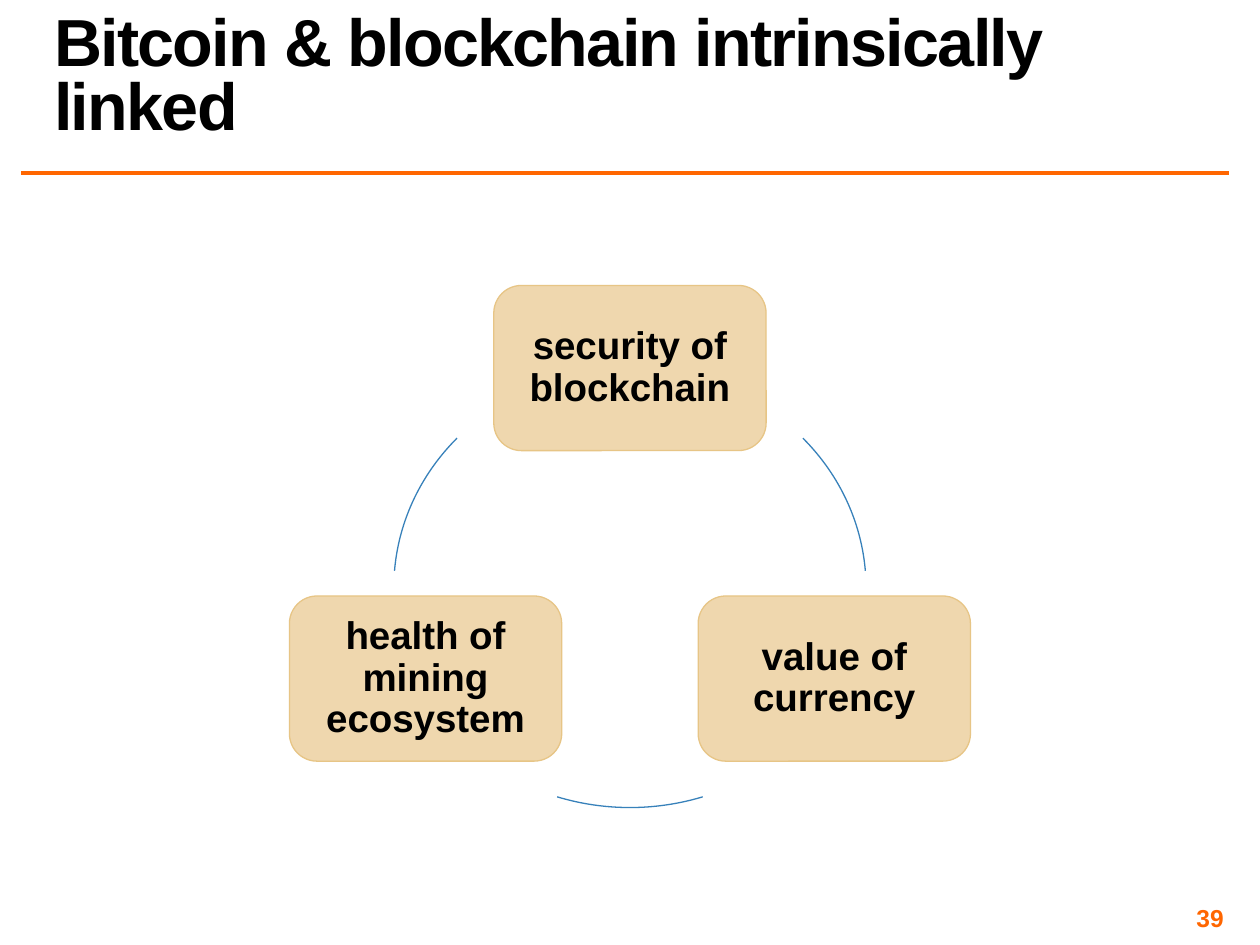
from lxml import etree
from pptx import Presentation
from pptx.dml.color import RGBColor
from pptx.enum.shapes import MSO_CONNECTOR, MSO_SHAPE
from pptx.enum.text import MSO_ANCHOR, PP_ALIGN
from pptx.oxml.ns import qn
from pptx.util import Cm, Pt

ROUNDED, ARC = MSO_SHAPE.ROUNDED_RECTANGLE, MSO_SHAPE.ARC
STRAIGHT = MSO_CONNECTOR.STRAIGHT
MIDDLE, BOTTOM = MSO_ANCHOR.MIDDLE, MSO_ANCHOR.BOTTOM
LEFT, CENTER, RIGHT = PP_ALIGN.LEFT, PP_ALIGN.CENTER, PP_ALIGN.RIGHT

BLACK = RGBColor(0x00, 0x00, 0x00)
ORANGE = RGBColor(0xFF, 0x66, 0x00)
SAND = RGBColor(0xEF, 0xD7, 0xAE)
SAND_EDGE = RGBColor(0xE7, 0xC5, 0x86)
BLUE = RGBColor(0x37, 0x81, 0xBA)


def write_text(shape, text, size, color=BLACK, align=LEFT, anchor=MIDDLE,
               inset_x=0.25, inset_y=0.13, spacing=1.0, before=0, after=0):
    """Fill a shape with one bold Arial paragraph; insets are in centimetres."""
    frame = shape.text_frame
    frame.word_wrap = True
    frame.vertical_anchor = anchor
    frame.margin_left = frame.margin_right = Cm(inset_x)
    frame.margin_top = frame.margin_bottom = Cm(inset_y)
    para = frame.paragraphs[0]
    para.alignment = align
    para.line_spacing = spacing
    para.space_before, para.space_after = Pt(before), Pt(after)
    span = para.add_run()
    span.text = text
    span.font.name, span.font.size, span.font.bold = "Arial", Pt(size), True
    span.font.color.rgb = color
    return span


deck = Presentation()
deck.slide_width, deck.slide_height = Cm(25.4), Cm(19.05)
page = deck.slides.add_slide(deck.slide_layouts[6])

# Header and page number
rule = page.shapes.add_connector(STRAIGHT, Cm(0.43), Cm(3.49), Cm(24.77), Cm(3.49))
rule.line.color.rgb, rule.line.width = ORANGE, Pt(2)
etree.SubElement(rule._element.spPr, qn("a:effectLst"))

number = page.shapes.add_textbox(Cm(18.85), Cm(18.21), Cm(5.92), Cm(0.58))
write_text(number, "39", 14, color=ORANGE, align=RIGHT, inset_x=0.1, inset_y=0.1)

title = page.shapes.add_textbox(Cm(0.84), Cm(0.05), Cm(24.43), Cm(2.97))
title_span = write_text(title, "Bitcoin & blockchain intrinsically linked", 38,
                        anchor=BOTTOM, spacing=0.8, before=12)
title_span.font._element.set("spc", "-100")

# Cycle: boxes clockwise from the top, each with the arc that follows it
CENTER_X, CENTER_Y = 12.7, 11.85
CYCLE_W, CYCLE_H = 9.52, 8.86
BOX_W, BOX_H = 5.49, 3.33
SIDE_SHIFT = 4.12
TOP_Y, LOWER_Y = 7.42, 13.68

steps = [
    ("security of blockchain", 0, TOP_Y, 319.14, 355.87),
    ("value of currency", SIDE_SHIFT, LOWER_Y, 70.8, 109.2),
    ("health of mining ecosystem", -SIDE_SHIFT, LOWER_Y, 184.13, 220.86),
]
DEGREE = 0.6  # one degree in adjustment units

for label, shift, middle_y, start, end in steps:
    box = page.shapes.add_shape(
        ROUNDED, Cm(CENTER_X + shift - BOX_W / 2), Cm(middle_y - BOX_H / 2),
        Cm(BOX_W), Cm(BOX_H))
    box.shadow.inherit = False
    box.adjustments[0] = 0.167
    box.fill.solid()
    box.fill.fore_color.rgb = SAND
    box.line.color.rgb, box.line.width = SAND_EDGE, Pt(0.75)
    write_text(box, label, 22, align=CENTER, inset_x=0.2, inset_y=0.2,
               spacing=0.9, after=6)

    arc = page.shapes.add_shape(
        ARC, Cm(CENTER_X - CYCLE_W / 2), Cm(CENTER_Y - CYCLE_H / 2),
        Cm(CYCLE_W), Cm(CYCLE_H))
    arc.shadow.inherit = False
    arc.adjustments[0], arc.adjustments[1] = start * DEGREE, end * DEGREE
    arc.fill.background()
    arc.line.color.rgb, arc.line.width = BLUE, Pt(0.75)

deck.save("out.pptx")
